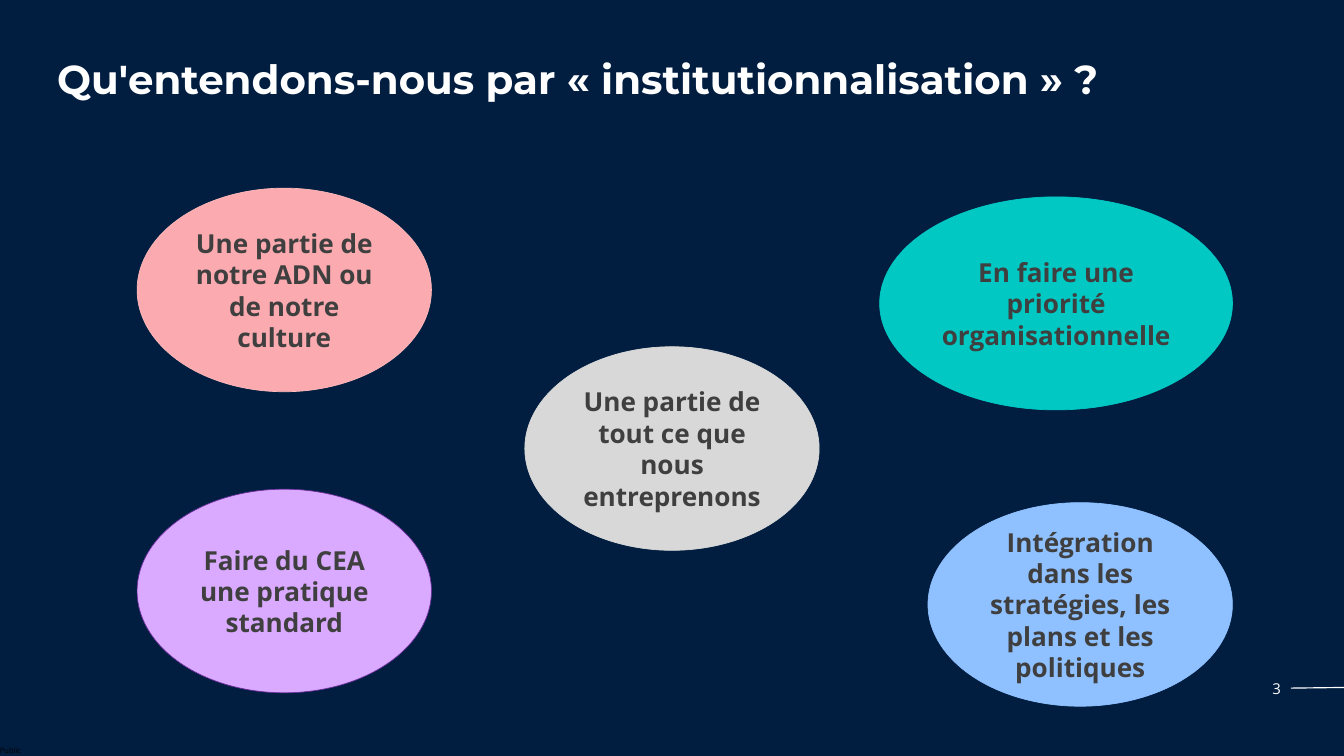
"""Build the slide on what « institutionnalisation » means."""
from dataclasses import dataclass

from lxml import etree
from pptx import Presentation
from pptx.dml.color import RGBColor
from pptx.enum.shapes import MSO_CONNECTOR, MSO_SHAPE
from pptx.enum.text import MSO_ANCHOR as ANCHOR, PP_ALIGN as ALIGN
from pptx.oxml.ns import qn
from pptx.util import Inches, Pt


@dataclass(frozen=True)
class Theme:
    navy: str = "011E41"
    white: str = "FFFFFF"
    charcoal: str = "3F3F3F"
    black: str = "000000"
    lilac: str = "D9AAFF"
    purple: str = "7030A0"
    pink: str = "FBABB0"
    pale_pink: str = "FEB8B9"
    blue: str = "8FC0FF"
    teal: str = "01C8C3"
    grey: str = "D8D8D8"
    heading: str = "Montserrat"
    body: str = "Open Sans"
    title_size: float = 43.2
    idea_size: float = 28
    number_size: float = 16
    label_size: float = 8


theme = Theme()


def rgb(value):
    return RGBColor.from_string(value)


def write(shape, text, font, size, color, bold=False, align=ALIGN.LEFT,
          anchor=ANCHOR.MIDDLE, insets=(0.15, 0.07, 0.15, 0.07)):
    frame = shape.text_frame
    left, top, right, bottom = map(Inches, insets)
    frame_format = {"word_wrap": True, "vertical_anchor": anchor, "margin_left": left,
                    "margin_top": top, "margin_right": right, "margin_bottom": bottom}
    for name, value in frame_format.items():
        setattr(frame, name, value)
    paragraph = frame.paragraphs[0]
    paragraph.alignment = align
    run = paragraph.add_run()
    run.text = text
    for name, value in {"name": font, "size": Pt(size), "bold": bold}.items():
        setattr(run.font, name, value)
    run.font.color.rgb = rgb(color)
    return paragraph


deck = Presentation()
deck.slide_width, deck.slide_height = Inches(20), Inches(11.25)
slide = deck.slides.add_slide(deck.slide_layouts[6])
slide.background.fill.solid()
slide.background.fill.fore_color.rgb = rgb(theme.navy)
shapes = slide.shapes

page_number = shapes.add_textbox(*map(Inches, (18.44, 10.06, 0.72, 0.37)))
write(page_number, "3", theme.body, theme.number_size, theme.white,
      align=ALIGN.RIGHT, anchor=ANCHOR.TOP, insets=(0.1, 0.05, 0.1, 0.05))

page_rule = shapes.add_connector(MSO_CONNECTOR.STRAIGHT, *map(Inches, (19.21, 10.24, 20, 10.23)))
page_rule.line.color.rgb = rgb(theme.white)
page_rule.line.width = Pt(1.25)
etree.SubElement(page_rule._element.spPr, qn("a:effectLst"))

classification = shapes.add_textbox(*map(Inches, (0, 11.08, 0.6, 0.17)))
write(classification, "Public", theme.body, theme.label_size, theme.black, insets=(0, 0, 0, 0))

title = shapes.add_textbox(*map(Inches, (0.7, 0.52, 16.67, 2.05)))
heading = write(title, "Qu'entendons-nous par « institutionnalisation » ?", theme.heading,
                theme.title_size, theme.white, bold=True, insets=(0.15, 0.07, 0.15, 0.73))
heading.line_spacing = 0.9

ideas = [
    ("Faire du CEA une pratique standard", (2.04, 7.28, 4.38, 3.03), theme.lilac, theme.purple),
    ("Une partie de notre ADN ou de notre culture", (2.04, 2.8, 4.38, 3.03),
     theme.pink, theme.pale_pink),
    ("Intégration dans les stratégies, les plans et les politiques", (13.81, 7.48, 4.53, 3.03),
     theme.blue, theme.blue),
    ("En faire une priorité organisationnelle", (13.09, 2.93, 5.25, 3.17), theme.teal, theme.teal),
    ("Une partie de tout ce que nous entreprenons", (7.81, 5.16, 4.38, 3.03),
     theme.grey, theme.grey),
]
for idea, place, fill, outline in ideas:
    bubble = shapes.add_shape(MSO_SHAPE.OVAL, *map(Inches, place))
    bubble.shadow.inherit = False
    bubble.fill.solid()
    bubble.fill.fore_color.rgb = rgb(fill)
    bubble.line.color.rgb = rgb(outline)
    bubble.line.width = Pt(0.75)
    write(bubble, idea, theme.body, theme.idea_size, theme.charcoal, bold=True, align=ALIGN.CENTER)

deck.save("out.pptx")
